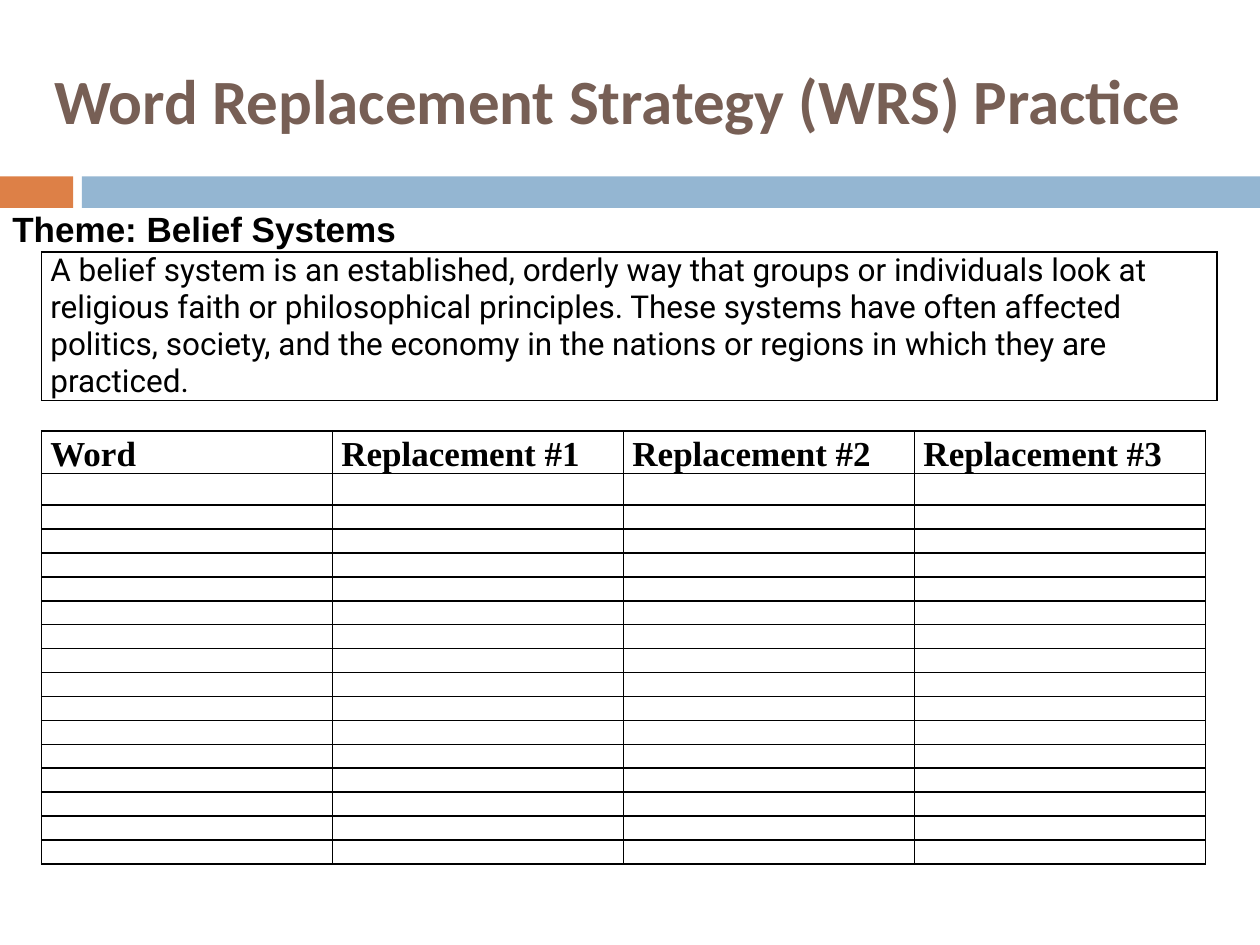
from dataclasses import dataclass

import pptx
import pptx.dml.color
import pptx.enum.shapes
import pptx.enum.text
import pptx.oxml
import pptx.oxml.ns
import pptx.util

Inches = pptx.util.Inches
Pt = pptx.util.Pt
ANCHOR = pptx.enum.text.MSO_ANCHOR
BLACK = "000000"


@dataclass
class Band:
    left: float
    width: float
    color: str


@dataclass
class Grid:
    left: float
    top: float
    column_width: float
    row_heights: list[float]
    texts: list[str]
    font: str
    size: float
    bold: bool = False
    line_spacing: float = 1.0


BANDS = [Band(0, 0.58, "DD8047"), Band(0.65, 9.35, "94B6D2")]

DEFINITION = Grid(
    0.33, 2, 9.33, [1.18],
    ["A belief system is an established, orderly way that groups or individuals look at "
     "religious faith or philosophical principles. These systems have often affected "
     "politics, society, and the economy in the nations or regions in which they are "
     "practiced."],
    "Roboto", 18)

WORKSHEET = Grid(
    0.33, 3.42, 2.31, [0.33, 0.25] + [0.19] * 15,
    ["Word"] + [f"Replacement #{number}" for number in range(1, 4)],
    "Times New Roman", 20, bold=True, line_spacing=1.1)


def rgb(color: str):
    return pptx.dml.color.RGBColor.from_string(color)


def write(frame, text: str, *, font: str, size: float, color: str = BLACK,
          bold: bool = False, line_spacing: float = 1.0, wrap: bool = True) -> None:
    frame.word_wrap = wrap
    paragraph = frame.paragraphs[0]
    paragraph.alignment = pptx.enum.text.PP_ALIGN.LEFT
    paragraph.line_spacing = line_spacing
    run = paragraph.add_run()
    run.text = text
    run.font.name = font
    run.font.size = Pt(size)
    run.font.bold = bold
    run.font.color.rgb = rgb(color)


def draw_band(slide, band: Band) -> None:
    bar = slide.shapes.add_shape(
        pptx.enum.shapes.MSO_SHAPE.RECTANGLE,
        Inches(band.left), Inches(1.4), Inches(band.width), Inches(0.25))
    bar.shadow.inherit = False
    bar.fill.solid()
    bar.fill.fore_color.rgb = rgb(band.color)
    bar.line.fill.background()


def add_borders(cell, color: str = BLACK) -> None:
    properties = cell._tc.get_or_add_tcPr()
    for position, side in enumerate(("lnL", "lnR", "lnT", "lnB")):
        properties.insert(position, pptx.oxml.parse_xml(
            f'<a:{side} {pptx.oxml.ns.nsdecls("a")} w="{Pt(1)}"><a:solidFill>'
            f'<a:srgbClr val="{color}"/></a:solidFill></a:{side}>'))


def shrink_empty_line(cell) -> None:
    """Keep the empty line of a blank cell lower than its row."""
    paragraph = cell.text_frame.paragraphs[0]._p
    paragraph.append(pptx.oxml.parse_xml(
        f'<a:endParaRPr {pptx.oxml.ns.nsdecls("a")} sz="800"/>'))


def draw_grid(slide, grid: Grid) -> None:
    rows, columns = len(grid.row_heights), len(grid.texts)
    table = slide.shapes.add_table(
        rows, columns, Inches(grid.left), Inches(grid.top),
        Inches(grid.column_width * columns), Inches(sum(grid.row_heights))).table
    table.first_row = False
    table.horz_banding = False
    for column in table.columns:
        column.width = Inches(grid.column_width)
    for row, height in zip(table.rows, grid.row_heights):
        row.height = Inches(height)
    for cell in table.iter_cells():
        cell.margin_left = cell.margin_right = Inches(0.07)
        cell.margin_top = cell.margin_bottom = 0
        cell.fill.background()
        add_borders(cell)
    for column, text in enumerate(grid.texts):
        write(table.cell(0, column).text_frame, text, font=grid.font, size=grid.size,
              bold=grid.bold, line_spacing=grid.line_spacing)
    for row in range(1, rows):
        for column in range(columns):
            shrink_empty_line(table.cell(row, column))


def main() -> None:
    deck = pptx.Presentation()
    deck.slide_width, deck.slide_height = Inches(10), Inches(7.5)
    slide = deck.slides.add_slide(deck.slide_layouts[5])

    for band in BANDS:
        draw_band(slide, band)

    title = slide.shapes.title
    title.left, title.top = Inches(0.33), Inches(0.25)
    title.width, title.height = Inches(9.25), Inches(1.08)
    title.text_frame.vertical_anchor = ANCHOR.MIDDLE
    write(title.text_frame, "Word Replacement Strategy (WRS) Practice",
          font="Calibri", size=36, color="775F55", bold=True)

    for grid in (DEFINITION, WORKSHEET):
        draw_grid(slide, grid)

    theme = slide.shapes.add_textbox(0, Inches(1.58), Inches(3.27), Inches(0.47))
    theme.text_frame.vertical_anchor = ANCHOR.MIDDLE
    write(theme.text_frame, "Theme: Belief Systems", font="Arial", size=20,
          bold=True, wrap=False)

    deck.save("out.pptx")


if __name__ == "__main__":
    main()
